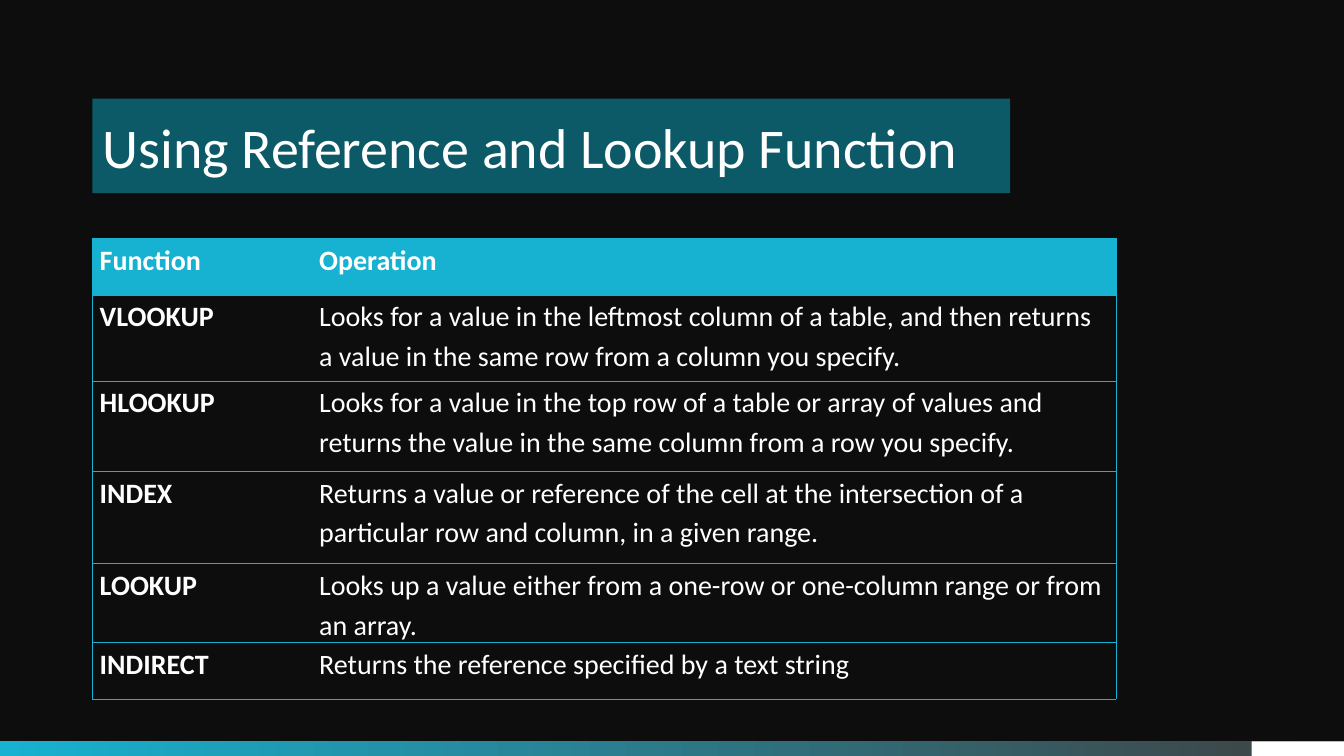
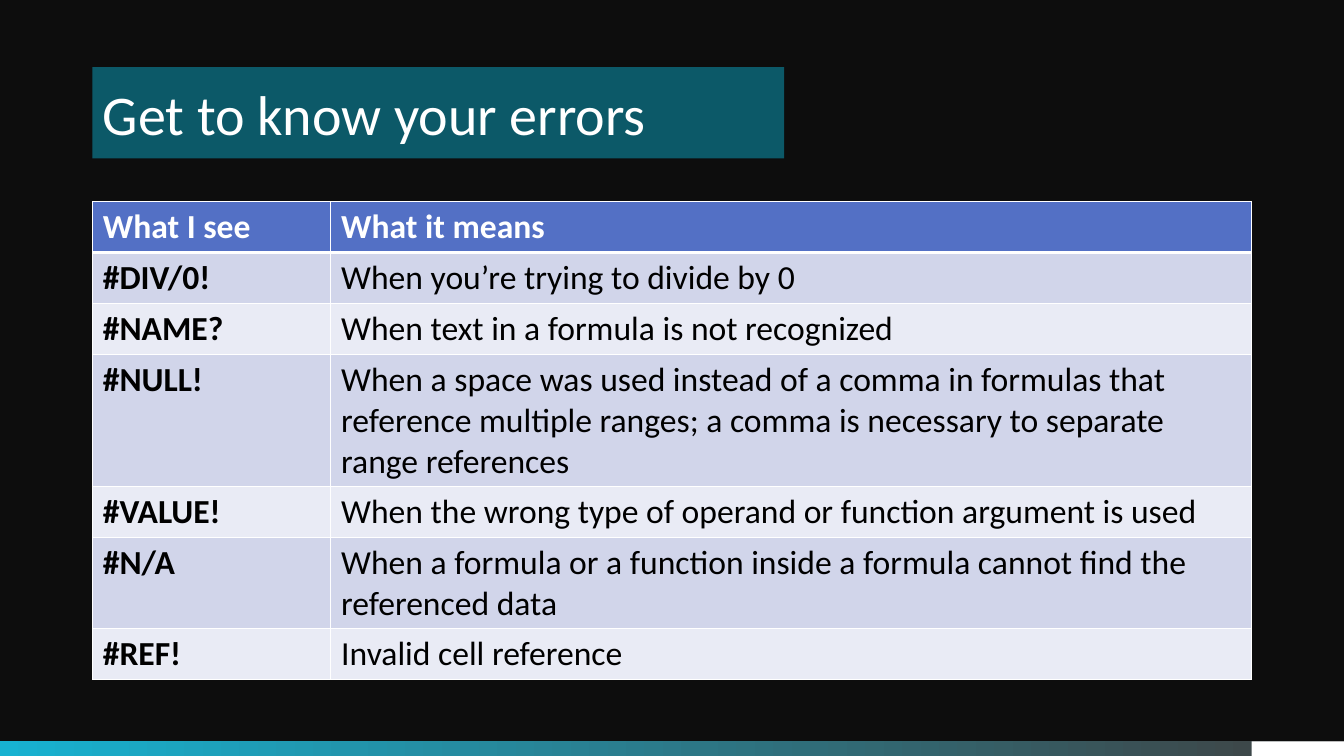
from dataclasses import dataclass

import lxml.etree
import pptx
import pptx.dml.color
import pptx.enum.shapes
import pptx.enum.text
import pptx.oxml.ns
import pptx.util

EMU_PER_PX = 9525
SLIDE_WIDTH, SLIDE_HEIGHT = 1280, 720
LEFT_MARGIN = 88
FOOTER_HEIGHT, FOOTER_END_WIDTH = 14, 88

FONT = "Calibri"
BACKGROUND = "0D0D0D"
TITLE_FILL = "0C5968"
CYAN, GREY = "17B2D1", "404040"
WHITE, BLACK = "FFFFFF", "000000"
BLUE, BAND_DARK, BAND_LIGHT = "5370C5", "D1D5EA", "E9EBF5"
PLAIN_TABLE_STYLE = "{2D5ABB26-0587-4C30-8999-92F81FD0307C}"


@dataclass(frozen=True)
class Title:
    text: str
    top: int
    width: int
    height: int


@dataclass(frozen=True)
class TableStyle:
    size: float
    text_color: str
    header_fill: str
    band_fills: tuple[str | None, ...]
    border_color: str
    border_width: float
    header_rule: float
    column_rules: bool
    inset_x: int
    inset_y: int
    line_spacing: float


@dataclass(frozen=True)
class Table:
    top: int
    columns: tuple[int, ...]
    heights: tuple[int, ...]
    rows: tuple[tuple[str, ...], ...]
    style: TableStyle


OUTLINED = TableStyle(
    size=20, text_color=WHITE, header_fill=CYAN, band_fills=(None,),
    border_color=CYAN, border_width=0.5, header_rule=0.5, column_rules=False,
    inset_x=7, inset_y=0, line_spacing=1.15,
)
BANDED = TableStyle(
    size=24, text_color=BLACK, header_fill=BLUE, band_fills=(BAND_DARK, BAND_LIGHT),
    border_color=WHITE, border_width=1, header_rule=3, column_rules=True,
    inset_x=10, inset_y=5, line_spacing=1.0,
)

SLIDES = (
    (
        Title("Using Reference and Lookup Function", 94, 874, 90),
        Table(
            227, (209, 766), (54, 82, 86, 88, 75, 54),
            (
                ("Function", "Operation"),
                ("VLOOKUP", "Looks for a value in the leftmost column of a table, and then "
                            "returns a value in the same row from a column you specify."),
                ("HLOOKUP", "Looks for a value in the top row of a table or array of values "
                            "and returns the value in the same column from a row you specify."),
                ("INDEX", "Returns a value or reference of the cell at the intersection of a "
                          "particular row and column, in a given range."),
                ("LOOKUP", "Looks up a value either from a one-row or one-column range or "
                           "from an array."),
                ("INDIRECT", "Returns the reference specified by a text string"),
            ),
            OUTLINED,
        ),
    ),
    (
        Title("Get to know your errors", 64, 659, 87),
        Table(
            192, (227, 877), (48, 48, 48, 126, 48, 87, 48),
            (
                ("What I see", "What it means"),
                ("#DIV/0!", "When you’re trying to divide by 0"),
                ("#NAME?", "When text in a formula is not recognized"),
                ("#NULL!", "When a space was used instead of a comma in formulas that "
                           "reference multiple ranges; a comma is necessary to separate "
                           "range references"),
                ("#VALUE!", "When the wrong type of operand or function argument is used"),
                ("#N/A", "When a formula or a function inside a formula cannot find the\n"
                         "referenced data"),
                ("#REF!", "Invalid cell reference"),
            ),
            BANDED,
        ),
    ),
)


def px(length: int) -> pptx.util.Emu:
    return pptx.util.Emu(length * EMU_PER_PX)


def rgb(color: str) -> pptx.dml.color.RGBColor:
    return pptx.dml.color.RGBColor.from_string(color)


def set_fill(fill, color: str | None) -> None:
    if color is None:
        fill.background()
    else:
        fill.solid()
        fill.fore_color.rgb = rgb(color)


def write_text(frame, text: str, *, size: float, color: str, bold: bool = False,
               line_spacing: float = 1.0) -> None:
    """Fill a text frame, one paragraph for each line of the text."""
    frame.text = text
    for paragraph in frame.paragraphs:
        paragraph.line_spacing = line_spacing
        for run in paragraph.runs:
            run.font.name = FONT
            run.font.size = pptx.util.Pt(size)
            run.font.bold = bold
            run.font.color.rgb = rgb(color)


def add_rectangle(slide, left: int, top: int, width: int, height: int):
    shape = slide.shapes.add_shape(
        pptx.enum.shapes.MSO_SHAPE.RECTANGLE, px(left), px(top), px(width), px(height))
    shape.shadow.inherit = False
    shape.line.fill.background()
    return shape


def add_footer(slide) -> None:
    top = SLIDE_HEIGHT - FOOTER_HEIGHT
    band = add_rectangle(slide, 0, top, SLIDE_WIDTH, FOOTER_HEIGHT)
    band.fill.gradient()
    band.fill.gradient_angle = 0
    for stop, color in zip(band.fill.gradient_stops, (CYAN, GREY)):
        stop.color.rgb = rgb(color)
    end = add_rectangle(
        slide, SLIDE_WIDTH - FOOTER_END_WIDTH, top, FOOTER_END_WIDTH, FOOTER_HEIGHT)
    set_fill(end.fill, WHITE)


def add_title(slide, title: Title) -> None:
    box = slide.shapes.add_textbox(
        px(LEFT_MARGIN), px(title.top), px(title.width), px(title.height))
    set_fill(box.fill, TITLE_FILL)
    frame = box.text_frame
    frame.word_wrap = True
    frame.vertical_anchor = pptx.enum.text.MSO_ANCHOR.MIDDLE
    frame.margin_left = frame.margin_right = px(10)
    frame.margin_top = frame.margin_bottom = px(12)
    write_text(frame, title.text, size=40, color=WHITE)


def add_border(cell, side: str, color: str, width: float) -> None:
    """Draw one side (L, R, T or B, in that order) before the cell is filled."""
    qualified = pptx.oxml.ns.qn
    line = lxml.etree.SubElement(
        cell._tc.get_or_add_tcPr(), qualified(f"a:ln{side}"), w=str(int(pptx.util.Pt(width))))
    fill = lxml.etree.SubElement(line, qualified("a:solidFill"))
    lxml.etree.SubElement(fill, qualified("a:srgbClr"), val=color)


def format_cell(cell, table: Table, row: int, column: int) -> None:
    style = table.style
    is_header = row == 0
    widths = {
        "L": style.border_width if style.column_rules or column == 0 else 0,
        "R": (style.border_width
              if style.column_rules or column == len(table.columns) - 1 else 0),
        "T": style.header_rule if row == 1 else style.border_width,
        "B": style.header_rule if is_header else style.border_width,
    }
    for side, width in widths.items():
        if width:
            add_border(cell, side, style.border_color, width)
    band = style.band_fills[(row - 1) % len(style.band_fills)]
    set_fill(cell.fill, style.header_fill if is_header else band)
    cell.margin_left = cell.margin_right = px(style.inset_x)
    cell.margin_top = cell.margin_bottom = px(style.inset_y)
    write_text(
        cell.text_frame, table.rows[row][column], size=style.size,
        color=WHITE if is_header else style.text_color,
        bold=is_header or column == 0, line_spacing=style.line_spacing)


def add_table(slide, table: Table) -> None:
    grid = slide.shapes.add_table(
        len(table.rows), len(table.columns), px(LEFT_MARGIN), px(table.top),
        px(sum(table.columns)), px(sum(table.heights))).table
    grid.horz_banding = False
    grid._tbl.tblPr.find(pptx.oxml.ns.qn("a:tableStyleId")).text = PLAIN_TABLE_STYLE
    for column, width in zip(grid.columns, table.columns):
        column.width = px(width)
    for row, height in enumerate(table.heights):
        grid.rows[row].height = px(height)
        for column in range(len(table.columns)):
            format_cell(grid.cell(row, column), table, row, column)


def main() -> None:
    presentation = pptx.Presentation()
    presentation.slide_width = px(SLIDE_WIDTH)
    presentation.slide_height = px(SLIDE_HEIGHT)
    set_fill(presentation.slide_master.background.fill, BACKGROUND)
    blank_layout = presentation.slide_layouts[6]
    for title, table in SLIDES:
        slide = presentation.slides.add_slide(blank_layout)
        add_footer(slide)
        add_title(slide, title)
        add_table(slide, table)
    presentation.save("out.pptx")


if __name__ == "__main__":
    main()
